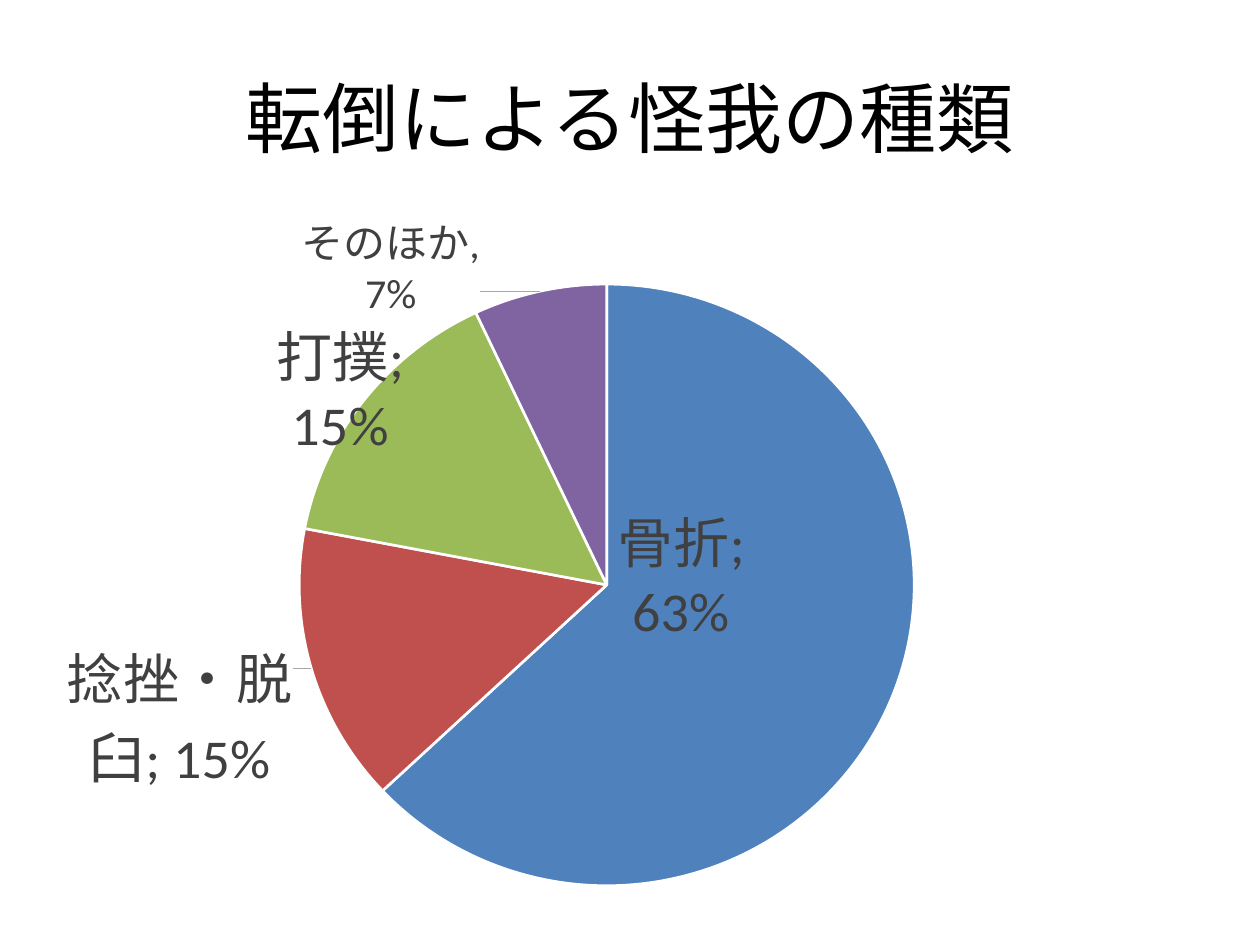
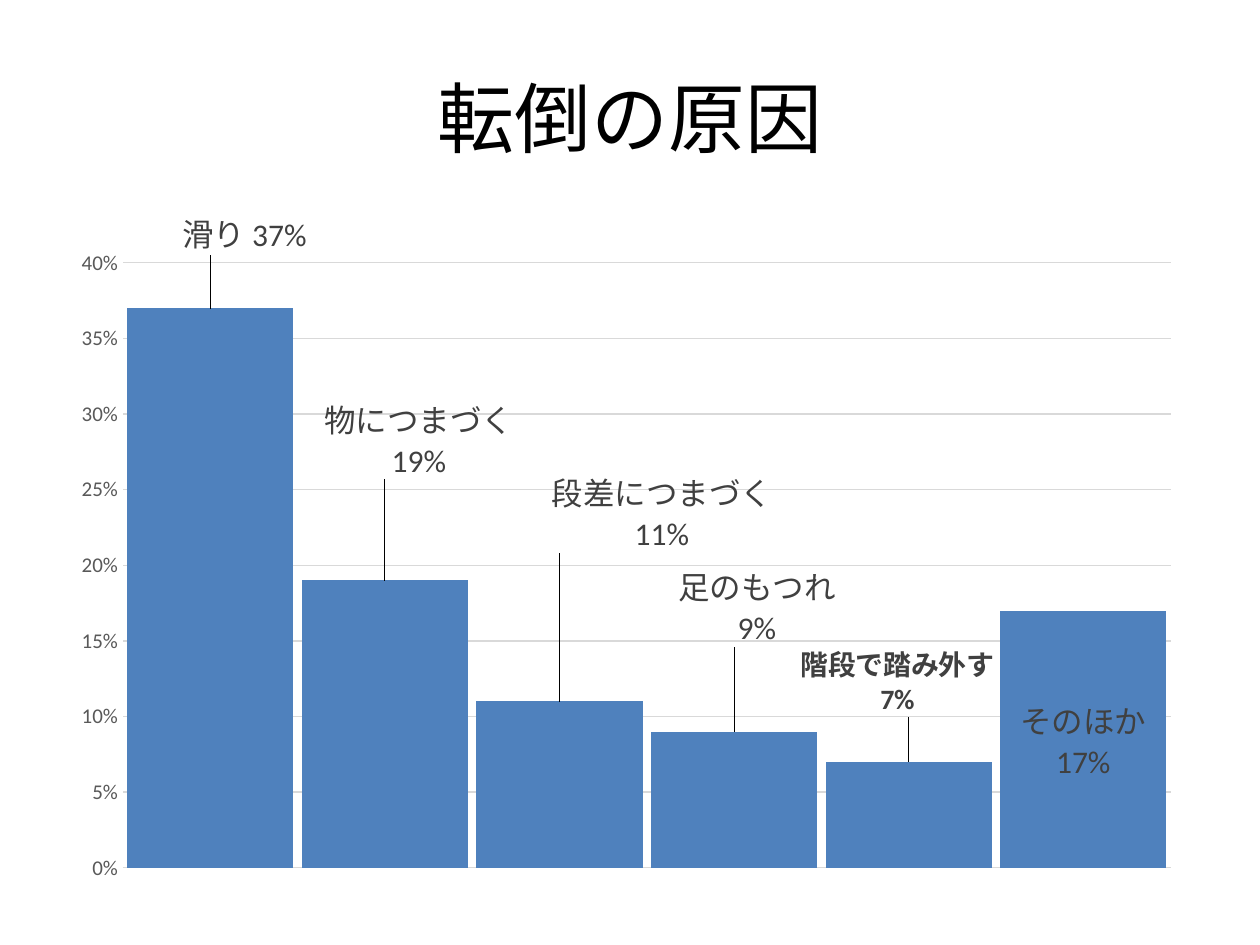
from lxml import etree
from pptx import Presentation
from pptx.chart.data import CategoryChartData as ChartData
from pptx.dml.color import RGBColor as RGB
from pptx.enum.chart import XL_CHART_TYPE as CT, XL_LABEL_POSITION as LP
from pptx.enum.chart import XL_TICK_LABEL_POSITION as TLP, XL_TICK_MARK as TM
from pptx.enum.text import MSO_ANCHOR, PP_ALIGN
from pptx.oxml import parse_xml
from pptx.oxml.ns import qn
from pptx.util import Cm, Pt

C = {k: RGB.from_string(v) for k, v in {
    "black": "000000", "white": "FFFFFF", "label": "404040", "axis": "595959",
    "grid": "D9D9D9", "blue": "4F81BD", "red": "C0504D",
    "green": "9BBB59", "purple": "8064A2",
}.items()}
FONT = "Calibri"
NS = ('xmlns:c="http://schemas.openxmlformats.org/drawingml/2006/chart" '
      'xmlns:a="http://schemas.openxmlformats.org/drawingml/2006/main"')


def set_layout(parent, index, target=None, **values):
    for old in parent.findall(qn("c:layout")):
        parent.remove(old)
    layout = etree.Element(qn("c:layout"))
    manual = etree.SubElement(layout, qn("c:manualLayout"))
    if target:
        values = {"layoutTarget": target, "xMode": "edge", "yMode": "edge", **values}
    for tag, value in values.items():
        etree.SubElement(manual, qn("c:" + tag)).set("val", str(value))
    parent.insert(index, layout)


def style_font(font, size, color, bold=False):
    font.name = FONT
    font.size = Pt(size)
    font.bold = bold
    font.color.rgb = C[color]


prs = Presentation()
prs.slide_width, prs.slide_height = Cm(25.4), Cm(19.05)

pages = [
    ("転倒による怪我の種類", CT.PIE, (0.99, 3.53, 23.42, 14.76),
     ["骨折", "捻挫・脱臼", "打撲", "そのほか"], [0.63, 0.15, 0.15, 0.07],
     dict(x=0.21, y=0.13, w=0.54, h=0.84)),
    ("転倒の原因", CT.COLUMN_CLUSTERED, (1.33, 2.57, 22.96, 16.05),
     ["1", "2", "3", "4", "5", "6"], [0.37, 0.19, 0.11, 0.09, 0.07, 0.17],
     dict(x=0.05, y=0.17, w=0.92, h=0.76)),
]
charts = []
for title, kind, box, cats, vals, area in pages:
    s = prs.slides.add_slide(prs.slide_layouts[6])
    sp = s.shapes.add_textbox(Cm(1.27), Cm(0.76), Cm(22.86), Cm(3.18))
    tf = sp.text_frame
    tf.word_wrap = True
    tf.vertical_anchor = MSO_ANCHOR.MIDDLE
    p = tf.paragraphs[0]
    p.text = title
    p.alignment = PP_ALIGN.CENTER
    style_font(p.runs[0].font, 44, "black")

    data = ChartData(number_format="0%")
    data.categories = cats
    data.add_series("Series 1", vals)
    chart = s.shapes.add_chart(kind, *map(Cm, box), data).chart
    chart.has_legend = False
    chart.has_title = False
    style_font(chart.font, 10, "black")
    chart.plots[0].vary_by_categories = kind == CT.PIE
    set_layout(chart.plots[0]._element.getparent(), 0, "inner", **area)
    charts.append(chart)
pie, column = charts

injuries = pie.plots[0].series[0]
labels = injuries.data_labels
labels.show_value = True
labels.show_category_name = True
labels.number_format = "0%"
labels.number_format_is_linked = False
style_font(labels.font, 32, "label")
slices = [
    ("blue", -0.24, -0.29, 32, "; "),
    ("red", -0.01, -0.05, 32, "; "),
    ("green", 0.04, 0.09, 32, "; "),
    ("purple", -0.05, 0.05, 24, ", "),
]
for i, (color, dx, dy, size, separator) in enumerate(slices):
    point = injuries.points[i]
    point.format.fill.solid()
    point.format.fill.fore_color.rgb = C[color]
    point.format.line.color.rgb = C["white"]
    point.format.line.width = Pt(1.5)
    label = point.data_label
    style_font(label.font, size, "label")
    label.position = LP.BEST_FIT
    dlbl = labels._element.findall(qn("c:dLbl"))[i]
    dlbl.find(qn("c:showCatName")).set("val", "1")
    sep = etree.Element(qn("c:separator"))
    sep.text = separator
    dlbl.find(qn("c:showBubbleSize")).addnext(sep)
    set_layout(dlbl, 1, x=dx, y=dy)
for old in labels._element.findall(qn("c:showLeaderLines")):
    labels._element.remove(old)
etree.SubElement(labels._element, qn("c:showLeaderLines")).set("val", "1")
labels._element.append(parse_xml(
    f'<c:leaderLines {NS}><c:spPr><a:ln w="9525"><a:solidFill>'
    '<a:srgbClr val="A6A6A6"/></a:solidFill></a:ln></c:spPr></c:leaderLines>'))

column.plots[0].gap_width = 5
causes = column.plots[0].series[0]
causes.invert_if_negative = False
causes.format.fill.solid()
causes.format.fill.fore_color.rgb = C["blue"]

cat = column.category_axis
cat.tick_label_position = TLP.NONE
cat.major_tick_mark = TM.NONE
cat.format.line.color.rgb = C["grid"]
cat.format.line.width = Pt(0.75)
val = column.value_axis
val.minimum_scale, val.maximum_scale, val.major_unit = 0, 0.4, 0.05
val.major_tick_mark = TM.NONE
val.format.line.fill.background()
val.major_gridlines.format.line.color.rgb = C["grid"]
val.major_gridlines.format.line.width = Pt(0.75)
val.tick_labels.number_format = "0%"
val.tick_labels.number_format_is_linked = False
style_font(val.tick_labels.font, 12, "axis")

labels = causes.data_labels
labels.show_value = True
style_font(labels.font, 18, "label")
bars = [
    ("滑り 37%", 0.03, -0.06, 18),
    ("物につまづく\n19%", 0.03, -0.12, 18),
    ("段差につまづく\n11%", 0.09, -0.18, 18),
    ("足のもつれ\n9%", 0.02, -0.1, 18),
    ("階段で踏み外す\n7%", -0.01, -0.05, 16),
    ("そのほか\n17%", 0, 0, 18),
]
for i, (text, dx, dy, size) in enumerate(bars):
    label = causes.points[i].data_label
    tf = label.text_frame
    tf.text = text
    tf.word_wrap = False
    for p in tf.paragraphs:
        p.alignment = PP_ALIGN.CENTER
        style_font(p.runs[0].font, size, "label", bold=size == 16)
    label.position = LP.OUTSIDE_END if dy else LP.CENTER
    if dy:
        set_layout(labels._element.findall(qn("c:dLbl"))[i], 1, x=dx, y=dy)
labels._element.append(parse_xml(
    f'<c:extLst {NS}><c:ext uri="{{CE6537A1-D6FC-4f65-9D91-7224C49458BB}}" '
    'xmlns:c15="http://schemas.microsoft.com/office/drawing/2012/chart">'
    '<c15:showLeaderLines val="1"/></c:ext></c:extLst>'))

prs.save("out.pptx")
